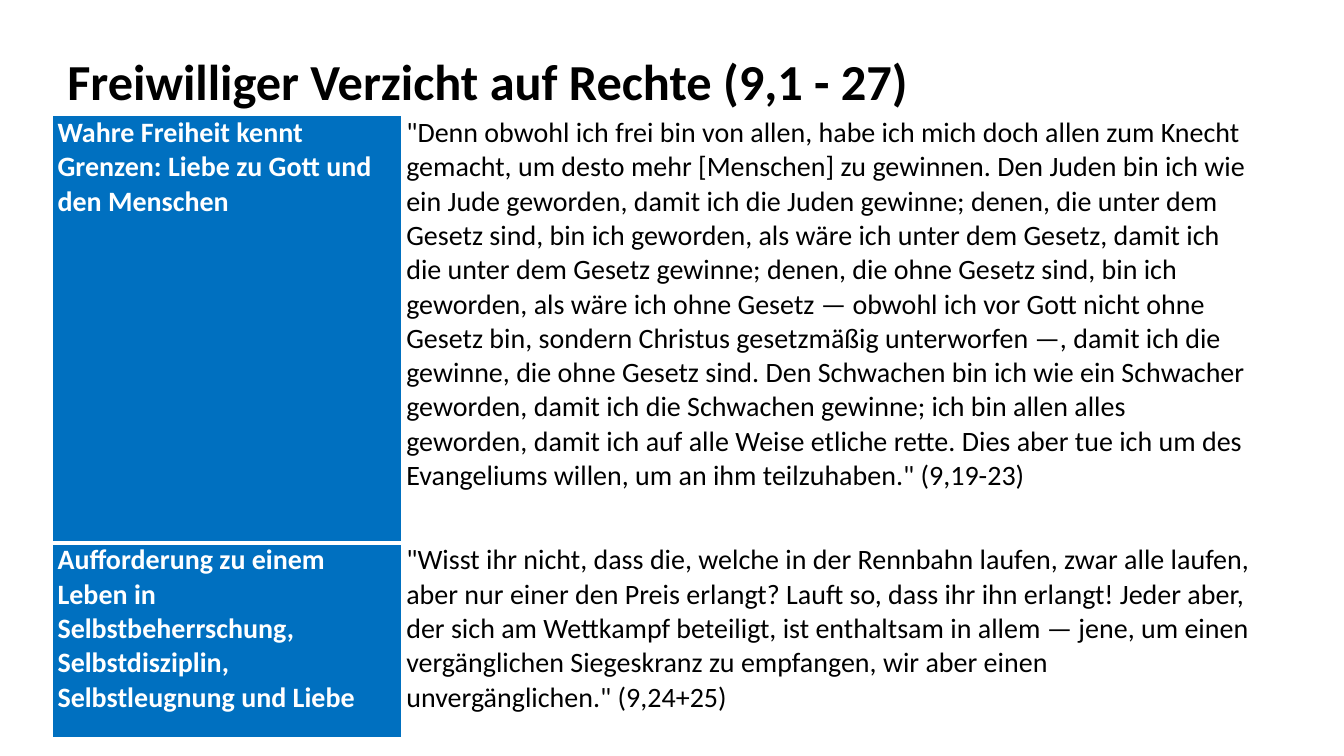
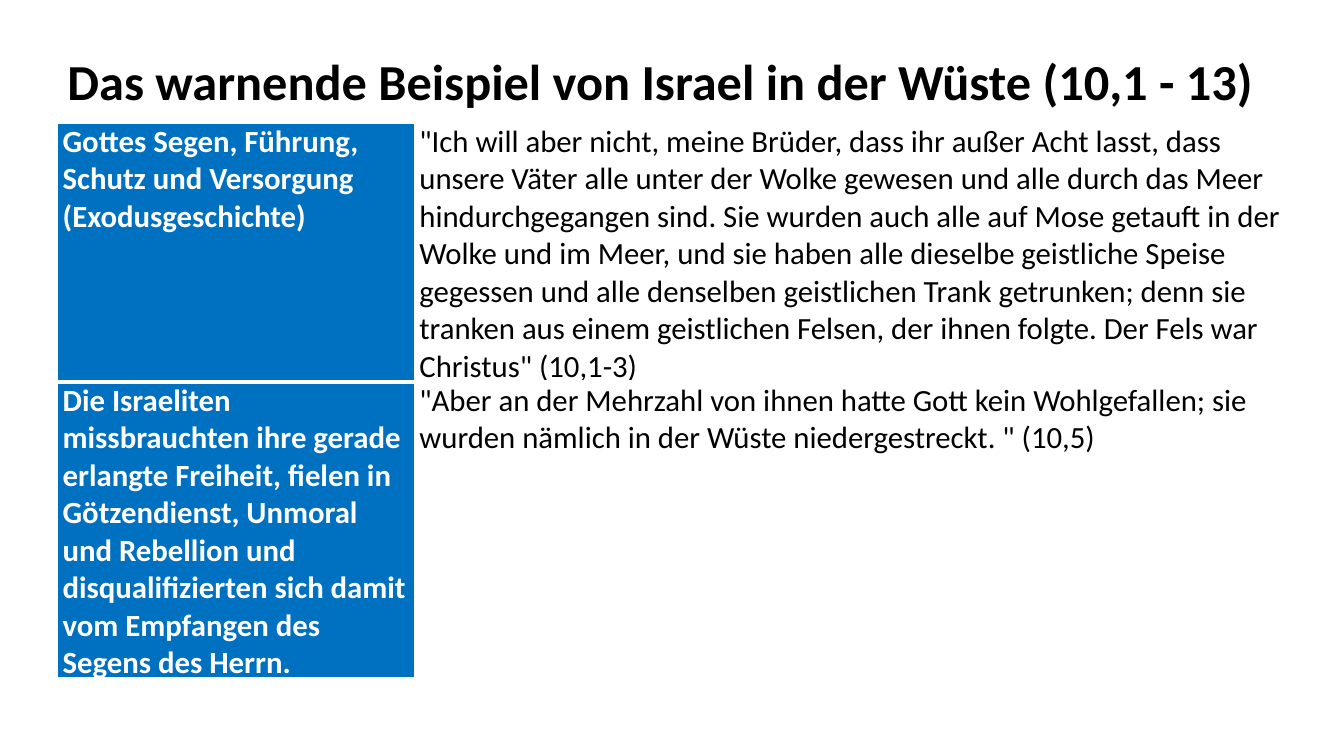
"""Build two slides, each with a title and a table of themes and Bible verses."""
import pptx
import pptx.dml.color
import pptx.enum.text
import pptx.oxml
import pptx.oxml.ns
import pptx.util

Cm = pptx.util.Cm
Pt = pptx.util.Pt
BLUE = pptx.dml.color.RGBColor(0x00, 0x70, 0xC0)
WHITE = pptx.dml.color.RGBColor(0xFF, 0xFF, 0xFF)
BLACK = pptx.dml.color.RGBColor(0x00, 0x00, 0x00)
FONT = "Calibri"
LOOKS = [(BLUE, WHITE, True), (WHITE, BLACK, False)]

SLIDES = [
    {
        "title": "Freiwilliger Verzicht auf Rechte (9,1 - 27)",
        "width": 21.92,
        "at": (1.32, 2.92),
        "cols": (8.79, 21.62),
        "rows": (10.77, 4.9),
        "size": 20,
        "cells": [
            (
                "Wahre Freiheit kennt Grenzen: Liebe zu Gott und den Menschen",
                '"Denn obwohl ich frei bin von allen, habe ich mich doch allen zum '
                "Knecht gemacht, um desto mehr [Menschen] zu gewinnen. Den Juden bin "
                "ich wie ein Jude geworden, damit ich die Juden gewinne; denen, die "
                "unter dem Gesetz sind, bin ich geworden, als wäre ich unter dem "
                "Gesetz, damit ich die unter dem Gesetz gewinne; denen, die ohne "
                "Gesetz sind, bin ich geworden, als wäre ich ohne Gesetz — obwohl ich "
                "vor Gott nicht ohne Gesetz bin, sondern Christus gesetzmäßig "
                "unterworfen —, damit ich die gewinne, die ohne Gesetz sind. Den "
                "Schwachen bin ich wie ein Schwacher geworden, damit ich die Schwachen "
                "gewinne; ich bin allen alles geworden, damit ich auf alle Weise "
                "etliche rette. Dies aber tue ich um des Evangeliums willen, um an ihm "
                'teilzuhaben." (9,19-23)',
            ),
            (
                "Aufforderung zu einem Leben in Selbstbeherrschung, "
                "Selbstdisziplin, Selbstleugnung und Liebe",
                '"Wisst ihr nicht, dass die, welche in der Rennbahn laufen, zwar alle '
                "laufen, aber nur einer den Preis erlangt? Lauft so, dass ihr ihn "
                "erlangt! Jeder aber, der sich am Wettkampf beteiligt, ist enthaltsam "
                "in allem — jene, um einen vergänglichen Siegeskranz zu empfangen, wir "
                'aber einen unvergänglichen." (9,24+25)',
            ),
        ],
    },
    {
        "title": "Das warnende Beispiel von Israel in der Wüste (10,1 - 13)",
        "width": 30.73,
        "at": (1.45, 3.1),
        "cols": (8.99, 22.12),
        "rows": (6.53, 7.44),
        "size": 22,
        "cells": [
            (
                "Gottes Segen, Führung, Schutz und Versorgung\n(Exodusgeschichte)",
                '"Ich will aber nicht, meine Brüder, dass ihr außer Acht lasst, dass '
                "unsere Väter alle unter der Wolke gewesen und alle durch das Meer "
                "hindurchgegangen sind. Sie wurden auch alle auf Mose getauft in der "
                "Wolke und im Meer, und sie haben alle dieselbe geistliche Speise "
                "gegessen und alle denselben geistlichen Trank getrunken; denn sie "
                "tranken aus einem geistlichen Felsen, der ihnen folgte. Der Fels war "
                'Christus" (10,1-3)',
            ),
            (
                "Die Israeliten missbrauchten ihre gerade erlangte Freiheit, fielen in "
                "Götzendienst, Unmoral und Rebellion und disqualifizierten sich damit "
                "vom Empfangen des Segens des Herrn.",
                '"Aber an der Mehrzahl von ihnen hatte Gott kein Wohlgefallen; sie '
                'wurden nämlich in der Wüste niedergestreckt. " (10,5)',
            ),
        ],
    },
]


def style(frame, size, color, bold):
    for para in frame.paragraphs:
        para.font.name = FONT
        para.font.size = Pt(size)
        para.font.bold = bold
        para.font.color.rgb = color


def add_title(slide, text, width):
    box = slide.shapes.add_textbox(Cm(1.45), Cm(1.14), Cm(width), Cm(1.8))
    frame = box.text_frame
    frame.word_wrap = False
    frame.auto_size = pptx.enum.text.MSO_AUTO_SIZE.SHAPE_TO_FIT_TEXT
    frame.text = text
    style(frame, 36, BLACK, True)


def add_edges(cell, base):
    props = cell._tc.get_or_add_tcPr()
    for side, width in (("L", 1), ("R", 1), ("T", 1), ("B", base)):
        props.append(pptx.oxml.parse_xml(
            f'<a:ln{side} {pptx.oxml.ns.nsdecls("a")} w="{Pt(width)}">'
            f'<a:solidFill><a:srgbClr val="{WHITE}"/></a:solidFill></a:ln{side}>'
        ))


def fill_cell(cell, text, size, look, base):
    back, color, bold = look
    cell.margin_left = cell.margin_right = Cm(0.13)
    cell.margin_top = cell.margin_bottom = 0
    add_edges(cell, base)
    cell.fill.solid()
    cell.fill.fore_color.rgb = back
    cell.text = text
    style(cell.text_frame, size, color, bold)


def add_grid(slide, data):
    cols, rows = data["cols"], data["rows"]
    left, top = data["at"]
    grid = slide.shapes.add_table(
        len(rows), len(cols), Cm(left), Cm(top), Cm(sum(cols)), Cm(sum(rows))
    ).table
    grid.first_row = grid.horz_banding = False
    for col, width in zip(grid.columns, cols):
        col.width = Cm(width)
    for row, height in zip(grid.rows, rows):
        row.height = Cm(height)
    for r, texts in enumerate(data["cells"]):
        for c, text in enumerate(texts):
            base = 3 if r == 0 else 1
            fill_cell(grid.cell(r, c), text, data["size"], LOOKS[c], base)


def main():
    deck = pptx.Presentation()
    deck.slide_width, deck.slide_height = Cm(33.87), Cm(19.05)
    for data in SLIDES:
        slide = deck.slides.add_slide(deck.slide_layouts[6])
        add_title(slide, data["title"], data["width"])
        add_grid(slide, data)
    deck.save("out.pptx")


if __name__ == "__main__":
    main()
